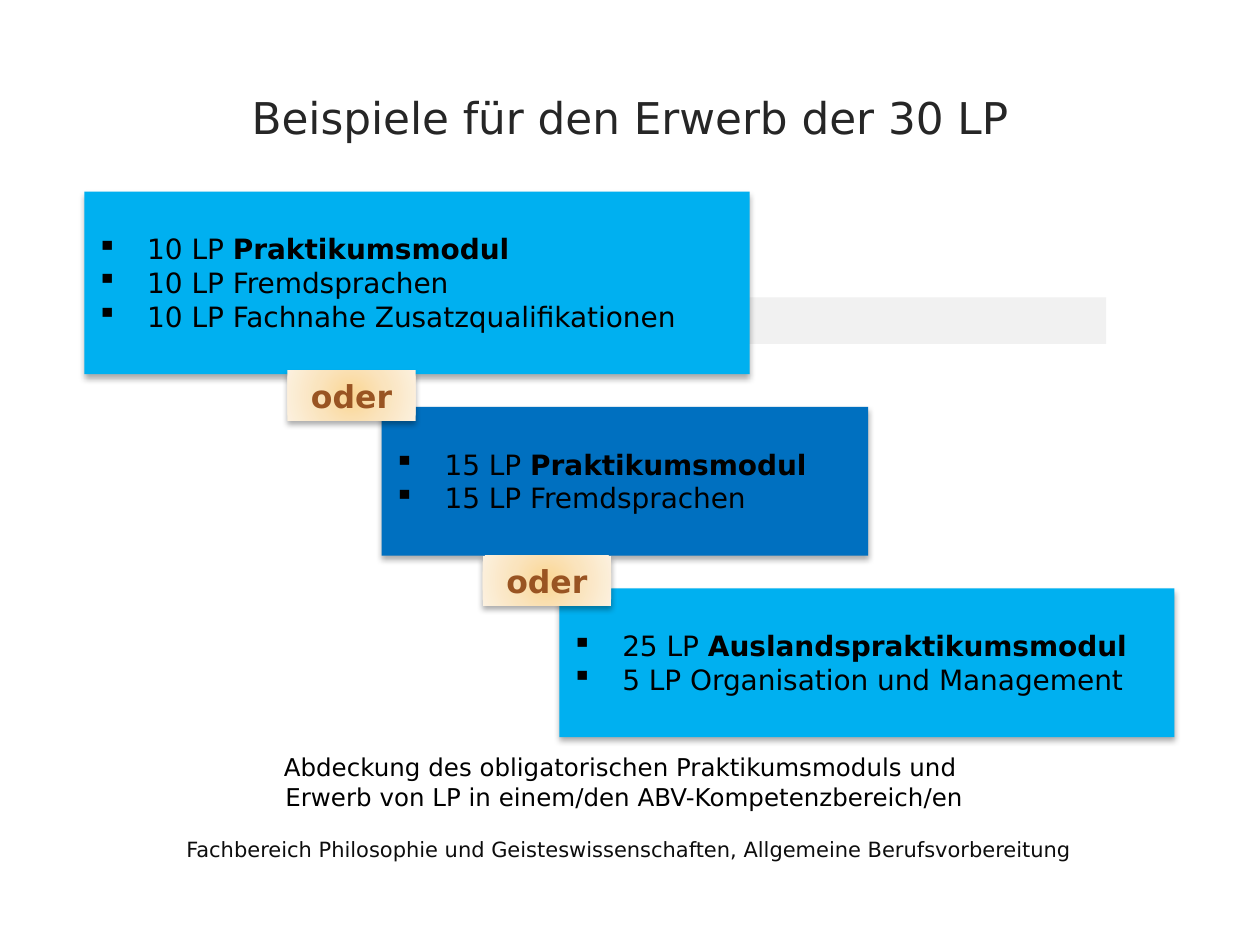
from lxml.etree import SubElement
from pptx import Presentation
from pptx.dml.color import RGBColor
from pptx.enum.shapes import MSO_SHAPE
from pptx.enum.text import MSO_ANCHOR, PP_ALIGN
from pptx.oxml import parse_xml
from pptx.oxml.ns import nsdecls, qn
from pptx.util import Inches, Pt

FONT = "DejaVu Sans"
COLORS = {
    "band": "F1F1F1", "light": "00B0F0", "dark": "0070C0", "text": "000000",
    "title": "262626", "footer": "0D0D0D", "or": "995422",
}
GLOW = [(0, "FAD693"), (50, "FAE4BE"), (100, "FCF1DF")]

TITLE = ("Beispiele für den Erwerb der 30 LP", (0.43, 0.21, 9.14, 1.43))
BAND = (0.9, 2.36, 7.88, 0.37)
OPTIONS = [
    ("light", (0.67, 1.52, 5.28, 1.45),
     [("10 LP ", "Praktikumsmodul"), ("10 LP Fremdsprachen", ""),
      ("10 LP Fachnahe Zusatzqualifikationen", "")]),
    ("dark", (3.03, 3.23, 3.86, 1.18),
     [("15 LP ", "Praktikumsmodul"), ("15 LP Fremdsprachen", "")]),
    ("light", (4.44, 4.67, 4.88, 1.18),
     [("25 LP ", "Auslandspraktikumsmodul"),
      ("5 LP Organisation und Management", "")]),
]
OR_LABEL = "oder"
OR_SIZE = (1.02, 0.4)
OR_PLACES = [(2.28, 2.94), (3.83, 4.41)]
SUMMARY = ("Abdeckung des obligatorischen Praktikumsmoduls und \v"
           "Erwerb von LP in einem/den ABV-Kompetenzbereich/en",
           (1.17, 5.92, 7.57, 0.57))
FOOTER = ("Fachbereich Philosophie und Geisteswissenschaften, "
          "Allgemeine Berufsvorbereitung", (1.38, 6.59, 7.35, 0.3))


def style(p, size, color, bold=False):
    for r in p.runs:
        r.font.name = FONT
        r.font.size = Pt(size)
        r.font.bold = bold
        r.font.color.rgb = RGBColor.from_string(COLORS[color])


def add_rect(s, box, color=None):
    sp = s.shapes.add_shape(MSO_SHAPE.RECTANGLE, *map(Inches, box))
    if color:
        sp.fill.solid()
        sp.fill.fore_color.rgb = RGBColor.from_string(COLORS[color])
    sp.line.fill.background()
    sp.shadow.inherit = False
    return sp


def add_shadow(sp):
    effects = sp._element.spPr.find(qn("a:effectLst"))
    effects.append(parse_xml(
        f'<a:outerShdw {nsdecls("a")} blurRad="{Pt(3.5)}" dist="{Pt(2.2)}" '
        'dir="5400000" rotWithShape="0"><a:srgbClr val="000000">'
        '<a:alpha val="32000"/></a:srgbClr></a:outerShdw>'))


def add_glow(sp):
    stops = "".join(f'<a:gs pos="{pos * 1000}"><a:srgbClr val="{color}"/></a:gs>'
                    for pos, color in GLOW)
    sp._element.spPr.find(qn("a:prstGeom")).addnext(parse_xml(
        f'<a:gradFill {nsdecls("a")} rotWithShape="1"><a:gsLst>{stops}</a:gsLst>'
        '<a:path path="circle"><a:fillToRect l="50000" t="50000" r="50000" '
        'b="50000"/></a:path></a:gradFill>'))


def add_bullet(p):
    pPr = p._p.get_or_add_pPr()
    pPr.set("marL", str(Inches(0.4)))
    pPr.set("indent", str(-Inches(0.4)))
    SubElement(pPr, qn("a:buChar")).set("char", "▪")


def add_option(s, color, box, items):
    sp = add_rect(s, box, color)
    add_shadow(sp)
    tf = sp.text_frame
    tf.word_wrap = True
    tf.vertical_anchor = MSO_ANCHOR.TOP
    tf.margin_top = Inches(0.32)
    for i, (plain, strong) in enumerate(items):
        p = tf.add_paragraph() if i else tf.paragraphs[0]
        add_bullet(p)
        p.alignment = PP_ALIGN.LEFT
        p.text = plain
        if strong:
            p.add_run().text = strong
        style(p, 16, "text")
        if strong:
            p.runs[-1].font.bold = True


def fill_text(sp, text, size, color, align, anchor, bold=False):
    tf = sp.text_frame
    tf.word_wrap = True
    tf.vertical_anchor = anchor
    tf.text = text
    p = tf.paragraphs[0]
    p.alignment = align
    style(p, size, color, bold)


def main():
    prs = Presentation()
    prs.slide_width, prs.slide_height = Inches(10), Inches(7.5)
    s = prs.slides.add_slide(prs.slide_layouts[5])

    text, box = TITLE
    title = s.shapes.title
    title.left, title.top, title.width, title.height = map(Inches, box)
    fill_text(title, text, 25, "title", PP_ALIGN.CENTER, MSO_ANCHOR.MIDDLE)

    add_rect(s, BAND, "band")
    for option in OPTIONS:
        add_option(s, *option)

    for place in OR_PLACES:
        sp = add_rect(s, place + OR_SIZE)
        add_glow(sp)
        add_shadow(sp)
        fill_text(sp, OR_LABEL, 18, "or", PP_ALIGN.CENTER, MSO_ANCHOR.TOP, True)

    for (text, box), size, color, align, anchor in [
        (SUMMARY, 14, "text", PP_ALIGN.CENTER, MSO_ANCHOR.TOP),
        (FOOTER, 12, "footer", PP_ALIGN.LEFT, MSO_ANCHOR.MIDDLE),
    ]:
        sp = s.shapes.add_textbox(*map(Inches, box))
        fill_text(sp, text, size, color, align, anchor)

    prs.save("out.pptx")


if __name__ == "__main__":
    main()
